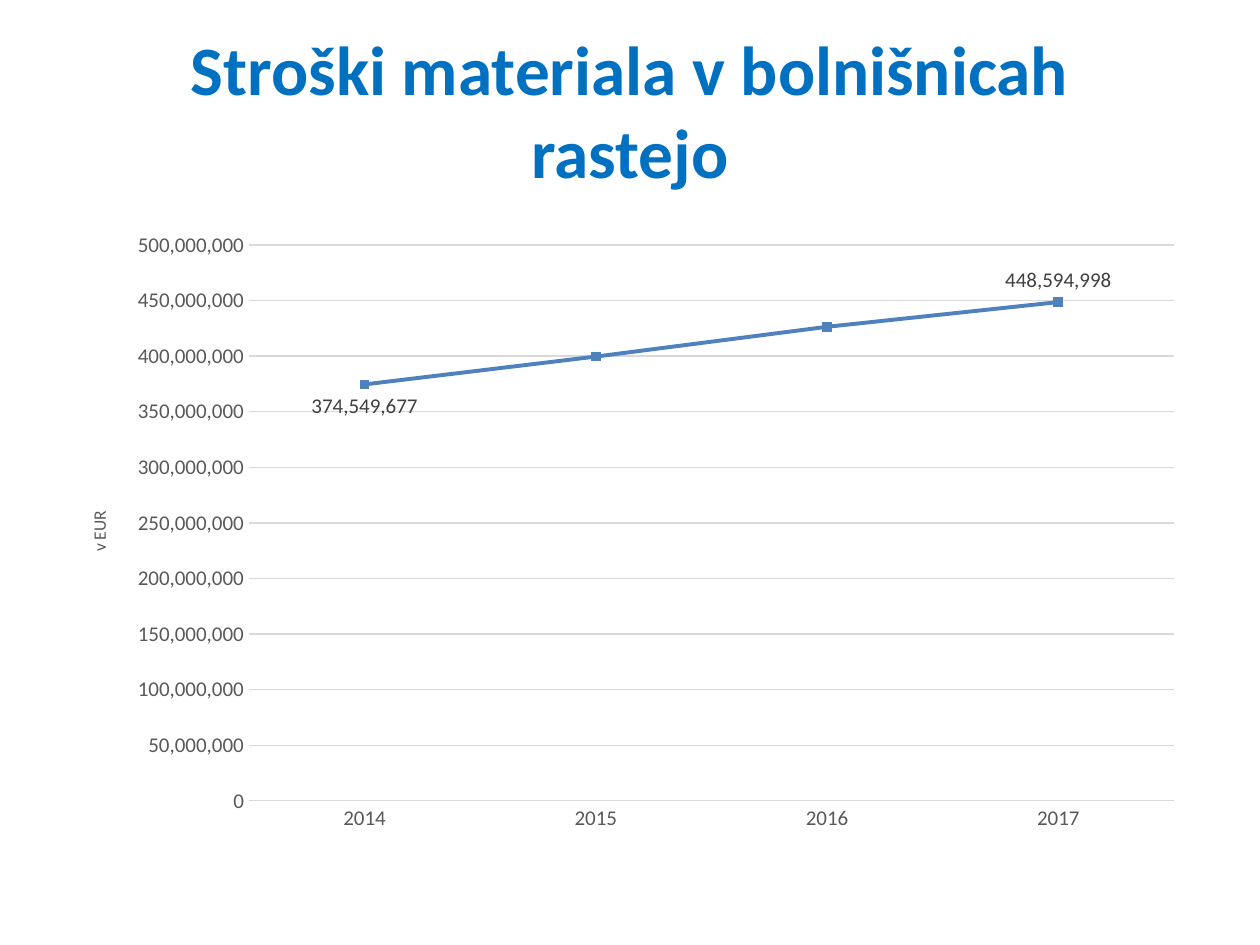
from dataclasses import dataclass

from lxml.etree import SubElement
from pptx import Presentation
from pptx.chart.data import CategoryChartData
from pptx.dml.color import RGBColor
from pptx.enum.chart import XL_CHART_TYPE, XL_LABEL_POSITION, XL_TICK_MARK
from pptx.enum.dml import MSO_LINE
from pptx.enum.text import MSO_ANCHOR, PP_ALIGN
from pptx.oxml.ns import qn
from pptx.util import Emu, Pt

PX_PER_INCH = 126
FONT = "Calibri"
NUMBER_FORMAT = "#,##0"
TITLE_BLUE = RGBColor(0x00, 0x70, 0xC0)
SERIES_BLUE = RGBColor(0x4F, 0x81, 0xBD)
AXIS_GRAY = RGBColor(0x59, 0x59, 0x59)
LABEL_GRAY = RGBColor(0x40, 0x40, 0x40)
GRID_GRAY = RGBColor(0xD9, 0xD9, 0xD9)


@dataclass(frozen=True)
class Box:
    x: int
    y: int
    w: int
    h: int

    def emu(self) -> tuple[Emu, ...]:
        return tuple(px(n) for n in (self.x, self.y, self.w, self.h))


@dataclass(frozen=True)
class PointLabel:
    index: int
    position: XL_LABEL_POSITION


TITLE_BOX = Box(87, 18, 1086, 183)
CHART_BOX = Box(63, 220, 1134, 624)
PLOT_BOX = Box(249, 245, 925, 556)
COSTS = {
    "2014": 374549677,
    "2015": 399596409,
    "2016": 426366452,
    "2017": 448594998,
}
POINT_LABELS = (
    PointLabel(0, XL_LABEL_POSITION.BELOW),
    PointLabel(3, XL_LABEL_POSITION.ABOVE),
)


def px(n: int) -> Emu:
    return Emu(round(n * 914400 / PX_PER_INCH))


def style_font(font, size: float, color: RGBColor, bold: bool = False) -> None:
    font.name = FONT
    font.size = Pt(size)
    font.bold = bold
    font.color.rgb = color


def style_line(line, color: RGBColor, width: float) -> None:
    line.color.rgb = color
    line.width = Pt(width)
    line.dash_style = MSO_LINE.SOLID


def add_title(s, text: str) -> None:
    tf = s.shapes.add_textbox(*TITLE_BOX.emu()).text_frame
    tf.word_wrap = True
    tf.vertical_anchor = MSO_ANCHOR.MIDDLE
    tf.text = text
    p = tf.paragraphs[0]
    p.alignment = PP_ALIGN.CENTER
    style_font(p.runs[0].font, 39.6, TITLE_BLUE, True)


def place_plot(chart) -> None:
    area = chart.plots[0]._element.getparent()
    layout = area.find(qn("c:layout"))
    if layout is None:
        layout = SubElement(area, qn("c:layout"))
        area.insert(0, layout)
    manual = SubElement(layout, qn("c:manualLayout"))
    settings = {
        "layoutTarget": "inner",
        "xMode": "edge",
        "yMode": "edge",
        "x": (PLOT_BOX.x - CHART_BOX.x) / CHART_BOX.w,
        "y": (PLOT_BOX.y - CHART_BOX.y) / CHART_BOX.h,
        "w": PLOT_BOX.w / CHART_BOX.w,
        "h": PLOT_BOX.h / CHART_BOX.h,
    }
    for name, value in settings.items():
        SubElement(manual, qn(f"c:{name}")).set("val", str(value))


def style_axes(chart) -> None:
    cat, val = chart.category_axis, chart.value_axis
    for axis in (cat, val):
        axis.major_tick_mark = axis.minor_tick_mark = XL_TICK_MARK.NONE
        style_font(axis.tick_labels.font, 12, AXIS_GRAY)
    style_line(cat.format.line, GRID_GRAY, 0.75)
    val.format.line.fill.background()
    val.minimum_scale = 0
    val.maximum_scale = 500_000_000
    val.major_unit = 50_000_000
    val.has_major_gridlines = True
    style_line(val.major_gridlines.format.line, GRID_GRAY, 0.75)
    val.tick_labels.number_format = NUMBER_FORMAT
    val.tick_labels.number_format_is_linked = False
    tf = val.axis_title.text_frame
    tf.text = "v EUR"
    style_font(tf.paragraphs[0].runs[0].font, 10, AXIS_GRAY)


def style_series(series) -> None:
    series.smooth = False
    series.marker.style = None
    style_line(series.format.line, SERIES_BLUE, 2.25)
    series.data_labels.show_value = False
    for label in POINT_LABELS:
        data_label = series.points[label.index].data_label
        style_font(data_label.font, 12, LABEL_GRAY)
        data_label.position = label.position


def add_cost_chart(s) -> None:
    data = CategoryChartData(number_format=NUMBER_FORMAT)
    data.categories = list(COSTS)
    data.add_series("Series 1", list(COSTS.values()))
    chart = s.shapes.add_chart(XL_CHART_TYPE.LINE, *CHART_BOX.emu(), data).chart
    chart.has_legend = False
    chart.has_title = False
    chart.font.name = FONT
    chart.font.size = Pt(10)
    chart.plots[0].vary_by_categories = False
    place_plot(chart)
    style_axes(chart)
    style_series(chart.plots[0].series[0])


def main() -> None:
    prs = Presentation()
    prs.slide_width, prs.slide_height = px(1260), px(945)
    s = prs.slides.add_slide(prs.slide_layouts[6])
    add_title(s, "Stroški materiala v bolnišnicah rastejo")
    add_cost_chart(s)
    prs.save("out.pptx")


if __name__ == "__main__":
    main()
